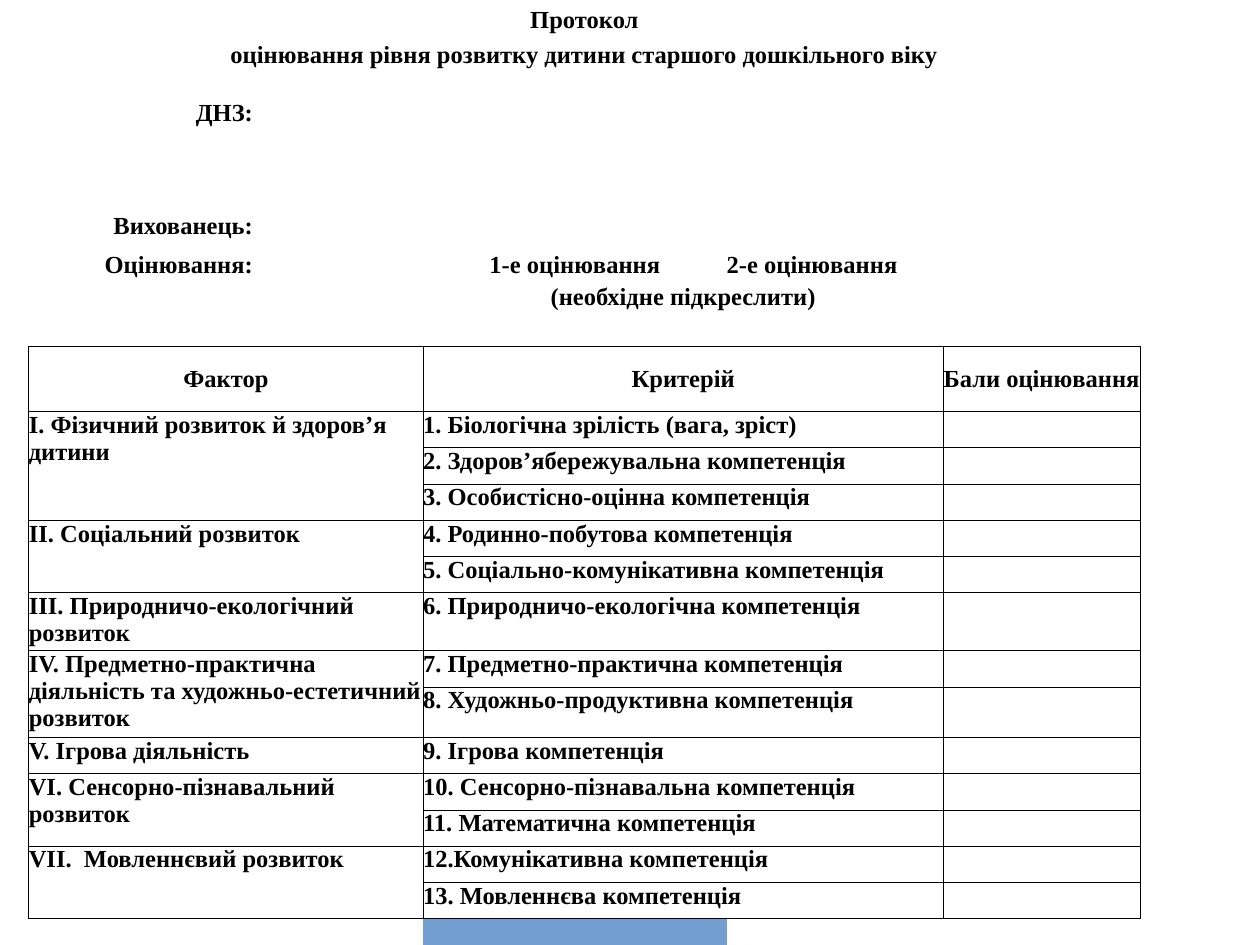
from dataclasses import dataclass

from lxml.etree import SubElement
from pptx import Presentation
from pptx.dml.color import RGBColor
from pptx.enum.text import MSO_ANCHOR, PP_ALIGN
from pptx.oxml import parse_xml
from pptx.oxml.ns import nsdecls, qn
from pptx.util import Cm, Pt


@dataclass(frozen=True)
class Theme:
    font: str = "Times New Roman"
    size: int = 14
    ink: str = "000000"
    border: float = 0.5


THEME = Theme()
COLS = [4.52, 3.05, 0.38, 6.12, 4.37, 3.96, 2.44]
LINE = 0.73
ROWS = ([0.69, 0.69, 0.64, 2.18, LINE, 0.69, 0.64, LINE, 1.31]
        + [LINE] * 5 + [1.17, LINE, 1.02] + [LINE] * 5 + [0.64])
HEAD, LAST, SCORE = 8, 21, 5

FACTORS = [
    ("І. Фізичний розвиток й здоров’я дитини",
     ["1. Біологічна зрілість (вага, зріст)",
      "2. Здоров’ябережувальна компетенція",
      "3. Особистісно-оцінна компетенція"]),
    ("ІІ. Соціальний розвиток",
     ["4. Родинно-побутова компетенція",
      "5. Соціально-комунікативна компетенція"]),
    ("ІІІ. Природничо-екологічний розвиток",
     ["6. Природничо-екологічна компетенція"]),
    ("IV. Предметно-практична діяльність та художньо-естетичний розвиток",
     ["7. Предметно-практична компетенція",
      "8. Художньо-продуктивна компетенція"]),
    ("V. Ігрова діяльність",
     ["9. Ігрова компетенція"]),
    ("VI. Сенсорно-пізнавальний розвиток",
     ["10. Сенсорно-пізнавальна компетенція",
      "11. Математична компетенція"]),
    ("VII.  Мовленнєвий розвиток",
     ["12.Комунікативна компетенція",
      "13. Мовленнєва компетенція"]),
]

LEFT, CENTER, RIGHT = PP_ALIGN.LEFT, PP_ALIGN.CENTER, PP_ALIGN.RIGHT
TOP, MIDDLE, BOTTOM = MSO_ANCHOR.TOP, MSO_ANCHOR.MIDDLE, MSO_ANCHOR.BOTTOM

# row, column, text, alignment, anchor
FORM_TEXTS = [
    (0, 0, "Протокол", CENTER, BOTTOM),
    (1, 0, "оцінювання рівня розвитку дитини старшого дошкільного віку", CENTER, BOTTOM),
    (3, 0, "ДНЗ:", RIGHT, TOP),
    (4, 0, "Вихованець:", RIGHT, MIDDLE),
    (5, 0, "Оцінювання:", RIGHT, BOTTOM),
    (5, 3, "1-е оцінювання", CENTER, BOTTOM),
    (5, 4, "2-е оцінювання", LEFT, BOTTOM),
    (6, 3, "(необхідне підкреслити)", CENTER, BOTTOM),
    (HEAD, 0, "Фактор", CENTER, MIDDLE),
    (HEAD, 3, "Критерій", CENTER, MIDDLE),
    (HEAD, SCORE, "Бали оцінювання", CENTER, MIDDLE),
]

# row, column, row span, column span
FORM_SPANS = ([(r, 0, 1, 6) for r in (0, 1)]
              + [(r, 1, 1, 5) for r in (3, 4)]
              + [(r, 1, 1, 2) for r in (2, 5, 6, 7, LAST + 1)]
              + [(5, 4, 1, 2), (6, 3, 1, 2), (HEAD, 0, 1, 3)]
              + [(r, 3, 1, 2) for r in range(HEAD, LAST + 1)])


def set_attrs(obj, values):
    for name, value in values.items():
        setattr(obj, name, value)


def add_grid(slide):
    tbl = slide.shapes.add_table(len(ROWS), len(COLS), Cm(0.58), 0,
                                 Cm(sum(COLS)), Cm(sum(ROWS))).table
    set_attrs(tbl, {"first_row": False, "horz_banding": False})
    for col, width in zip(tbl.columns, COLS):
        col.width = Cm(width)
    for row, height in zip(tbl.rows, ROWS):
        row.height = Cm(height)
    return tbl


def clear_cell(cell):
    """Remove fill and insets, and keep the empty line as small as the text."""
    cell.fill.background()
    set_attrs(cell, {f"margin_{side}": 0 for side in ("left", "right", "top", "bottom")})
    end = SubElement(cell.text_frame.paragraphs[0]._p, qn("a:endParaRPr"))
    end.set("sz", str(THEME.size * 100))


def write_cell(cell, text, align=LEFT, anchor=TOP):
    cell.vertical_anchor = anchor
    p = cell.text_frame.paragraphs[0]
    p.alignment = align
    r = p.add_run()
    r.text = text
    set_attrs(r.font, {"name": THEME.font, "size": Pt(THEME.size), "bold": True})
    r.font.color.rgb = RGBColor.from_string(THEME.ink)


def merge_cells(tbl, spans):
    """Merge the spans and return the first cell that owns each position."""
    owner = {(r, c): (r, c) for r in range(len(ROWS)) for c in range(len(COLS))}
    for r, c, height, width in spans:
        tbl.cell(r, c).merge(tbl.cell(r + height - 1, c + width - 1))
        for i in range(r, r + height):
            for j in range(c, c + width):
                owner[i, j] = (r, c)
    return owner


def in_grid(pos):
    return HEAD <= pos[0] <= LAST and pos[1] <= SCORE


def draw_borders(tbl, owner):
    """Line each edge that touches the score grid and is not inside a merged cell."""
    sides = {"lnL": (0, -1), "lnR": (0, 1), "lnT": (-1, 0), "lnB": (1, 0)}
    ink = f'<a:solidFill><a:srgbClr val="{THEME.ink}"/></a:solidFill>'
    for r, c in owner:
        tc_pr = tbl.cell(r, c)._tc.get_or_add_tcPr()
        for i, (tag, (dr, dc)) in enumerate(sides.items()):
            near = (r + dr, c + dc)
            lined = ((in_grid((r, c)) or near in owner and in_grid(near))
                     and owner.get(near) != owner[r, c])
            paint = ink if lined else "<a:noFill/>"
            tc_pr.insert(i, parse_xml(
                f'<a:{tag} {nsdecls("a")} w="{Pt(THEME.border)}">{paint}</a:{tag}>'))


def main():
    prs = Presentation()
    set_attrs(prs, {"slide_width": Cm(25.4), "slide_height": Cm(19.05)})
    s = prs.slides.add_slide(prs.slide_layouts[6])
    tbl = add_grid(s)

    texts, spans = list(FORM_TEXTS), list(FORM_SPANS)
    row = HEAD + 1
    for factor, criteria in FACTORS:
        spans.append((row, 0, len(criteria), 3))
        texts.append((row, 0, factor))
        texts += [(row + i, 3, text) for i, text in enumerate(criteria)]
        row += len(criteria)

    owner = merge_cells(tbl, spans)
    for r, c in owner:
        clear_cell(tbl.cell(r, c))
    for r, c, *content in texts:
        write_cell(tbl.cell(r, c), *content)
    draw_borders(tbl, owner)
    prs.save("out.pptx")


if __name__ == "__main__":
    main()
